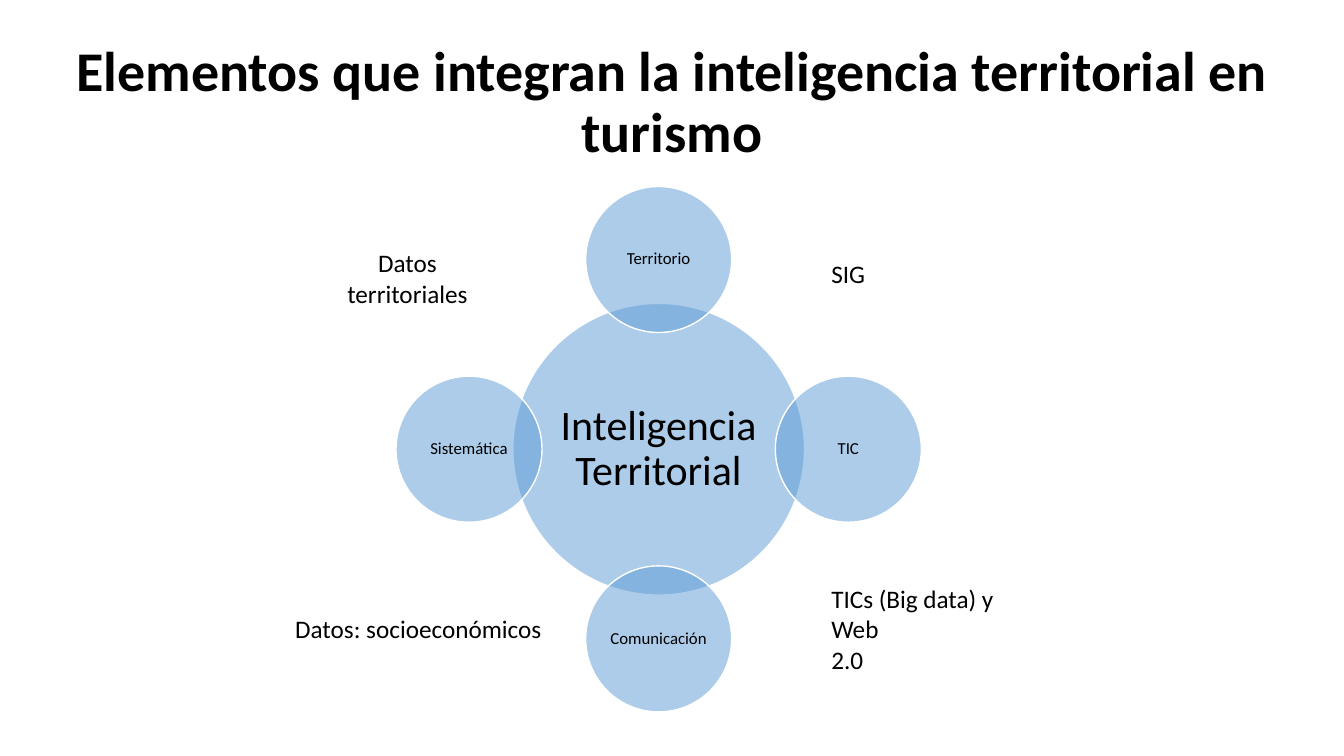
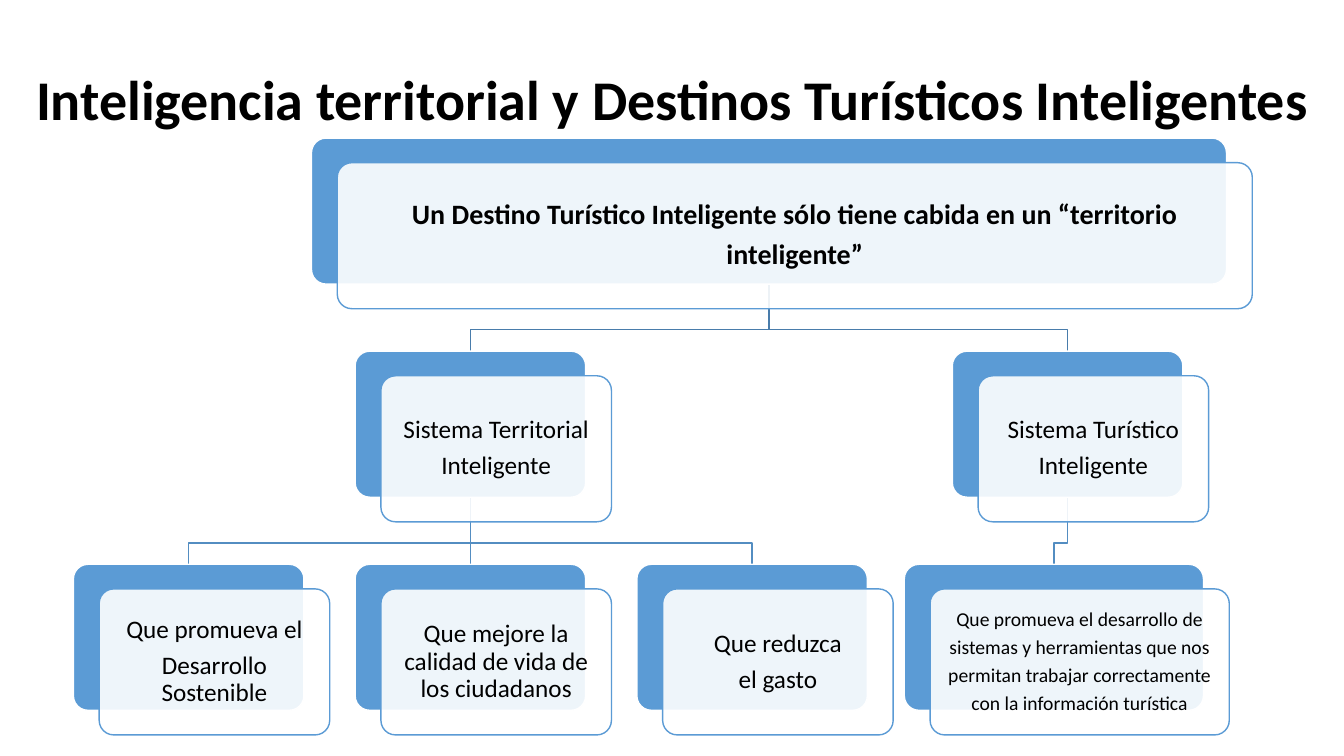
from lxml.etree import SubElement
from pptx import Presentation
from pptx.dml.color import RGBColor
from pptx.enum.shapes import MSO_CONNECTOR as CONNECTOR, MSO_SHAPE as SHAPE
from pptx.enum.text import MSO_ANCHOR as ANCHOR, PP_ALIGN as ALIGN
from pptx.oxml.ns import qn
from pptx.util import Cm, Pt

BLUE, WHITE, BLACK = "5B9BD5", "FFFFFF", "000000"
UPPER_LINE, LOWER_LINE = "497CAB", "538DC1"
SLIDE_WIDTH, SLIDE_HEIGHT = 33.87, 19.05


def color(hex_string):
    return RGBColor.from_string(hex_string)


class Deck:
    """Shared style and the current slide; all lengths are in centimetres."""
    font_name = "Calibri"
    card_height = 3.68
    card_shift = (0.65, 0.62)

    def __init__(self):
        self.presentation = Presentation()
        self.presentation.slide_width = Cm(SLIDE_WIDTH)
        self.presentation.slide_height = Cm(SLIDE_HEIGHT)
        self.slide = None

    def new_slide(self, title, title_top):
        layout = self.presentation.slide_layouts[6]
        self.slide = self.presentation.slides.add_slide(layout)
        self.text(title, 0, title_top, SLIDE_WIDTH, 2.72, size=40, bold=True,
                  align=ALIGN.CENTER, anchor=ANCHOR.BOTTOM, line_spacing=0.9)

    def set_text(self, shape, text, size, bold=False, align=ALIGN.CENTER,
                 anchor=ANCHOR.MIDDLE, line_spacing=0.9, space_after=0):
        frame = shape.text_frame
        frame.word_wrap = True
        frame.vertical_anchor = anchor
        frame.text = text
        for paragraph in frame.paragraphs:
            paragraph.alignment = align
            paragraph.line_spacing = line_spacing
            paragraph.space_after = Pt(space_after)
            for run in paragraph.runs:
                run.font.name = self.font_name
                run.font.size = Pt(size)
                run.font.bold = bold
                run.font.color.rgb = color(BLACK)

    def text(self, text, left, top, width, height, size=18, bold=False,
             align=ALIGN.LEFT, anchor=ANCHOR.TOP, line_spacing=1.0):
        box = self.slide.shapes.add_textbox(Cm(left), Cm(top), Cm(width), Cm(height))
        self.set_text(box, text, size, bold, align, anchor, line_spacing)

    def shape(self, kind, left, top, width, height, fill, line, opacity=100):
        shape = self.slide.shapes.add_shape(
            kind, Cm(left), Cm(top), Cm(width), Cm(height))
        shape.shadow.inherit = False
        shape.fill.solid()
        shape.fill.fore_color.rgb = color(fill)
        shape.line.color.rgb = color(line)
        shape.line.width = Pt(1)
        if opacity < 100:
            fill_color = shape.element.spPr.find(qn("a:solidFill"))[0]
            SubElement(fill_color, qn("a:alpha")).set("val", str(opacity * 1000))
        return shape

    def inner_text(self, shape, text, size, margin, bold=False):
        frame = shape.text_frame
        frame.margin_left = frame.margin_right = Cm(margin)
        frame.margin_top = frame.margin_bottom = Cm(margin)
        self.set_text(shape, text, size, bold, space_after=0.35 * size)

    def circle(self, text, center_x, center_y, diameter, size, margin):
        circle = self.shape(SHAPE.OVAL, center_x - diameter / 2,
                            center_y - diameter / 2, diameter, diameter,
                            BLUE, WHITE, opacity=50)
        self.inner_text(circle, text, size, margin)

    def card(self, text, left, top, width, size=18, bold=False):
        """Draw a blue card under a translucent text card; return the blue one."""
        shift_x, shift_y = self.card_shift
        back = self.shape(SHAPE.ROUNDED_RECTANGLE, left, top, width,
                          self.card_height, BLUE, WHITE)
        front = self.shape(SHAPE.ROUNDED_RECTANGLE, left + shift_x, top + shift_y,
                           width, self.card_height, WHITE, BLUE, opacity=90)
        for layer in (back, front):
            layer.adjustments[0] = 0.1
        self.inner_text(front, text, size, 0.18, bold)
        return back

    def branch(self, parent, child, line_color):
        """Link the bottom of parent to the top of child, behind the cards."""
        start_x = parent.left + parent.width // 2
        start_y = parent.top + parent.height
        end_x = child.left + child.width // 2
        shapes = self.slide.shapes
        if start_x == end_x:
            link = shapes.add_connector(CONNECTOR.STRAIGHT, start_x, start_y,
                                        end_x, child.top)
            link.begin_connect(parent, 2)
            link.end_connect(child, 0)
            SubElement(link.element.spPr, qn("a:effectLst"))
        else:
            bend_y = start_y + round((child.top - start_y) * 0.68)
            builder = shapes.build_freeform(start_x, start_y)
            builder.add_line_segments(
                [(start_x, bend_y), (end_x, bend_y), (end_x, child.top)], close=False)
            link = builder.convert_to_shape()
            link.fill.background()
            link.shadow.inherit = False
        link.line.color.rgb = color(line_color)
        link.line.width = Pt(1)
        link.element.getparent().insert(2, link.element)


def elements_slide(deck):
    deck.new_slide("Elementos que integran la inteligencia territorial en turismo", 1.55)

    # Hub with four circles around it
    center_x, center_y, orbit = 16.6, 11.32, 4.78
    deck.circle("Inteligencia Territorial", center_x, center_y, 7.35, 30, 0.1)
    for name, step_x, step_y in (("Territorio", 0, -1), ("TIC", 1, 0),
                                 ("Comunicación", 0, 1), ("Sistemática", -1, 0)):
        deck.circle(name, center_x + step_x * orbit, center_y + step_y * orbit,
                    3.68, 12, 0.05)

    # Labels in the corners
    deck.text("SIG", 20.7, 6.38, 2, 1.02)
    deck.text("Datos\nterritoriales", 8.15, 6.12, 4.24, 1.8, align=ALIGN.CENTER)
    deck.text("TICs (Big data) y Web\n2.0", 20.7, 14.58, 5.16, 2.57)
    deck.text("Datos: socioeconómicos", 7.19, 15.34, 7, 1.02)


def destinations_slide(deck):
    deck.new_slide("Inteligencia territorial y Destinos Turísticos Inteligentes", 0.76)

    # Card grid
    card_width = 5.81
    columns = [1.85 + 7.1 * index for index in range(3)]
    top_row, system_row, goal_row = [3.48 + 5.37 * index for index in range(3)]

    # Cards
    root = deck.card("Un Destino Turístico Inteligente sólo tiene cabida en un “territorio\n"
                     "inteligente”", 7.85, top_row, 23.06, size=20, bold=True)
    territorial = deck.card("Sistema Territorial\nInteligente",
                            columns[1], system_row, card_width)
    tourist = deck.card("Sistema Turístico\nInteligente", 24, system_row, card_width)
    goals = [deck.card(text, left, goal_row, card_width) for text, left in zip(
        ("Que promueva el\nDesarrollo Sostenible",
         "Que mejore la calidad de vida de los ciudadanos",
         "Que reduzca\nel gasto"), columns)]
    tools = deck.card("Que promueva el desarrollo de\nsistemas y herramientas que nos\n"
                      "permitan trabajar correctamente\ncon la información turística",
                      22.79, goal_row, 7.54, size=14)

    # Branches
    for system in (territorial, tourist):
        deck.branch(root, system, UPPER_LINE)
    for goal in goals:
        deck.branch(territorial, goal, LOWER_LINE)
    deck.branch(tourist, tools, LOWER_LINE)


def main():
    deck = Deck()
    elements_slide(deck)
    destinations_slide(deck)
    deck.presentation.save("out.pptx")


if __name__ == "__main__":
    main()
